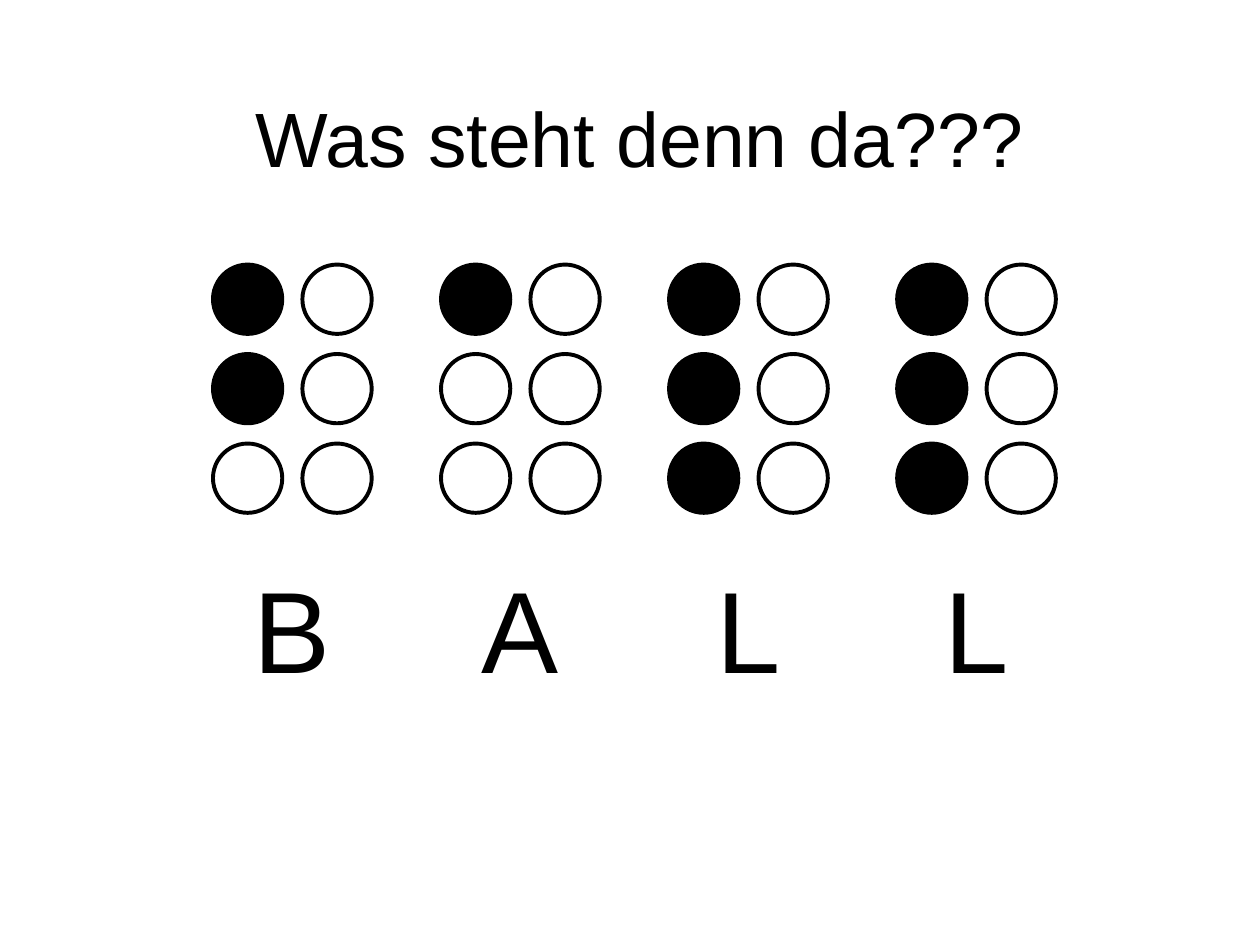
from dataclasses import dataclass

from pptx import Presentation
from pptx import util as u
from pptx.dml.color import RGBColor
from pptx.enum import shapes, text


@dataclass(frozen=True)
class Theme:
    ink: str = "000000"
    paper: str = "FFFFFF"
    font: str = "Arial"
    title_size: float = 44
    letter_size: float = 66
    outline: float = 2.25


WORD = [("B", "##....", 0.81), ("A", "#o.o..", 0.81),
        ("L", "###o..", 0.71), ("L", "###...", 0.71)]
CELL_LEFT, CELL_TOP, CELL_PITCH = 1.69, 2.1, 1.81
DOT_SIZE, DOT_PITCH = 0.55, 0.71
DOT_ROWS = 3
CELL_WIDTH = DOT_PITCH + DOT_SIZE
LETTER_TOP, LETTER_HEIGHT = 4.38, 1.2


def write(frame, content, font, size, color,
          align=text.PP_ALIGN.LEFT, anchor=text.MSO_ANCHOR.TOP, wrap=True):
    frame.word_wrap = wrap
    frame.vertical_anchor = anchor
    para = frame.paragraphs[0]
    para.alignment = align
    span = para.add_run()
    span.text = content
    span.font.name = font
    span.font.size = u.Pt(size)
    span.font.color.rgb = RGBColor.from_string(color)


class Painter:
    def __init__(self, page, theme):
        self.page = page
        self.theme = theme

    def group(self):
        return self.page.shapes.add_group_shape()

    def title(self, content, left, top, width, height):
        box = self.page.shapes.add_textbox(*map(u.Inches, (left, top, width, height)))
        write(box.text_frame, content, self.theme.font, self.theme.title_size,
              self.theme.ink, align=text.PP_ALIGN.CENTER, anchor=text.MSO_ANCHOR.MIDDLE)

    def dot(self, group, left, top, mark):
        dot = group.shapes.add_shape(shapes.MSO_SHAPE.OVAL, u.Inches(left), u.Inches(top),
                                     u.Inches(DOT_SIZE), u.Inches(DOT_SIZE))
        dot.shadow.inherit = False
        dot.line.color.rgb = RGBColor.from_string(self.theme.ink)
        dot.line.width = u.Pt(self.theme.outline)
        if mark == ".":
            dot.fill.background()
        else:
            dot.fill.solid()
            color = self.theme.ink if mark == "#" else self.theme.paper
            dot.fill.fore_color.rgb = RGBColor.from_string(color)

    def cell(self, group, left, top, marks):
        for index, mark in enumerate(marks):
            column, row = divmod(index, DOT_ROWS)
            self.dot(group, left + column * DOT_PITCH, top + row * DOT_PITCH, mark)

    def letter(self, group, content, center, width):
        box = group.shapes.add_textbox(u.Inches(center - width / 2), u.Inches(LETTER_TOP),
                                       u.Inches(width), u.Inches(LETTER_HEIGHT))
        write(box.text_frame, content, self.theme.font, self.theme.letter_size,
              self.theme.ink, wrap=False)
        box.text_frame.auto_size = text.MSO_AUTO_SIZE.SHAPE_TO_FIT_TEXT


def main():
    deck = Presentation()
    deck.slide_width, deck.slide_height = u.Inches(10), u.Inches(7.5)
    page = deck.slides.add_slide(deck.slide_layouts[6])
    theme = Theme()
    page.background.fill.solid()
    page.background.fill.fore_color.rgb = RGBColor.from_string(theme.paper)

    painter = Painter(page, theme)
    painter.title("Was steht denn da???", 0.83, 0.28, 8.5, 1.61)
    braille, letters = painter.group(), painter.group()
    for index, (letter, marks, width) in enumerate(WORD):
        left = CELL_LEFT + index * CELL_PITCH
        painter.cell(braille, left, CELL_TOP, marks)
        painter.letter(letters, letter, left + CELL_WIDTH / 2, width)
    deck.save("out.pptx")


if __name__ == "__main__":
    main()
